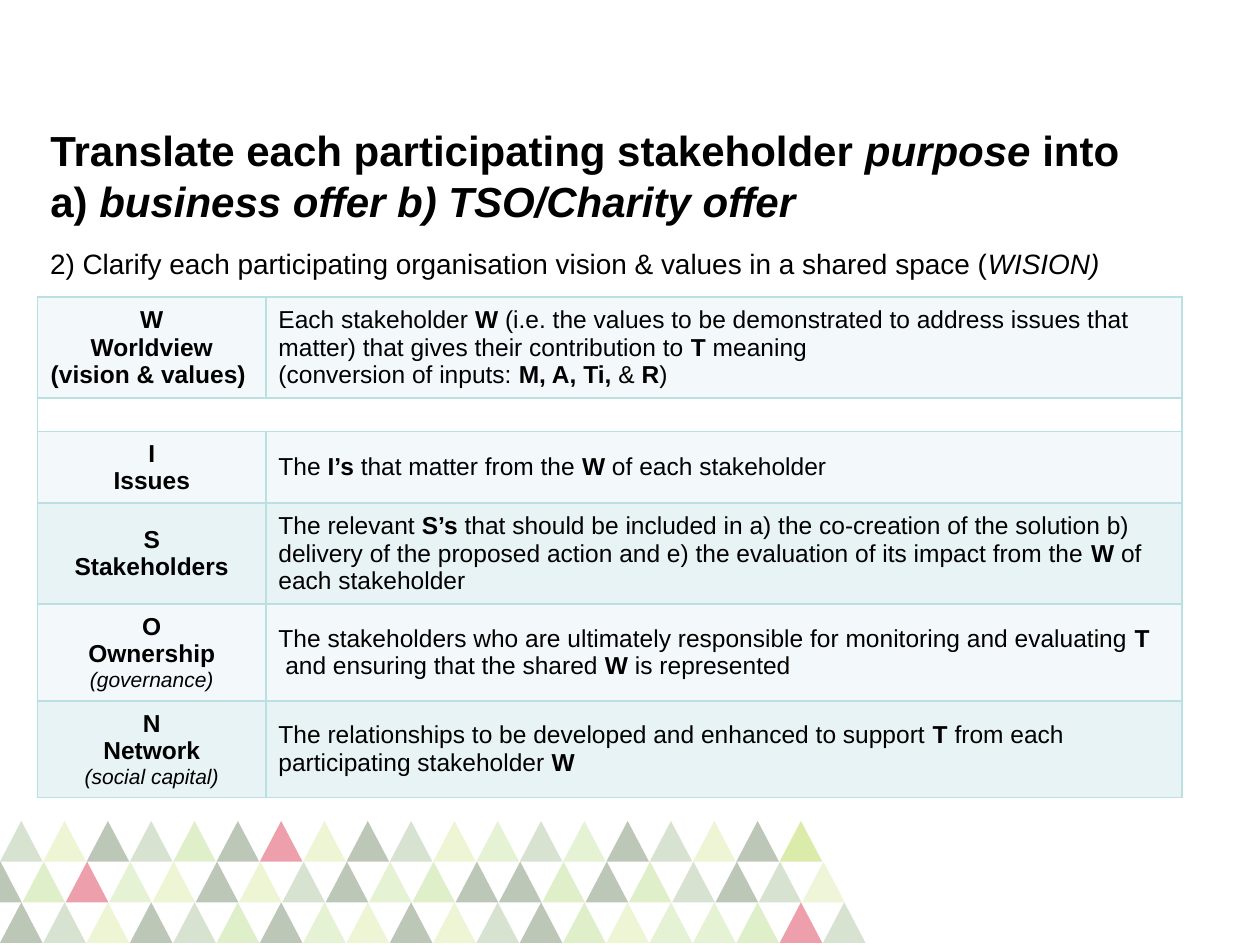
from dataclasses import dataclass
from lxml.etree import SubElement
from pptx import Presentation
from pptx.dml.color import RGBColor
from pptx.enum.shapes import MSO_SHAPE
from pptx.enum.text import MSO_ANCHOR, MSO_AUTO_SIZE, PP_ALIGN
from pptx.oxml.ns import qn
from pptx.slide import Slide
from pptx.util import Cm, Pt

BLACK = RGBColor(0x00, 0x00, 0x00)
BORDER = RGBColor(0xBB, 0xE0, 0xE3)
PALE = RGBColor(0xF3, 0xF9, 0xFA)
TINT = RGBColor(0xE7, 0xF3, 0xF4)
FOREST = RGBColor(0x26, 0x47, 0x15)
GREEN = RGBColor(0x4A, 0x81, 0x2C)
LEAF = RGBColor(0x81, 0xC1, 0x2C)
LIME = RGBColor(0xA7, 0xCD, 0x28)
RED = RGBColor(0xD3, 0x12, 0x2E)

TRIANGLE_FILLS = {
    "D": (FOREST, 30), "G": (GREEN, 22), "L": (LEAF, 25), "l": (LEAF, 20),
    "Y": (LIME, 20), "y": (LIME, 18), "B": (LIME, 40), "R": (RED, 40),
}
TRIANGLE_ROWS = [
    (0, "GYDGLDRYDGYlGlDGYDB"),
    (-0.42, "DLRlYDYGDlLDDLDLGDGy"),
    (0, "DGYDGLDlYDYGDLYllLRG"),
]

TITLE = {"size": Pt(24), "bold": True, "italic": False}
LEAD = {"size": Pt(16), "bold": False, "italic": False}
LABEL = {"size": Pt(14), "bold": True, "italic": False}
DETAIL = {"size": Pt(14), "bold": False, "italic": False}
ITALIC = {"italic": True}
BOLD = {"bold": True}
NOTE = {"size": Pt(12), "bold": False, "italic": True}

WISION_ROWS = [
    (1.92, PALE, ["W", "Worldview", "(vision & values) "],
     ["Each stakeholder *W* (i.e. the values to be demonstrated to address issues "
      "that matter) that gives their contribution to *T* meaning",
      "(conversion of inputs: *M, A, Ti, *& *R*)"]),
    (0.65, None, [], []),
    (1.36, PALE, ["I", "Issues"],
     ["The* I’s* that matter from the *W* of each stakeholder"]),
    (1.92, TINT, ["S", "Stakeholders"],
     ["The relevant *S’s* that should be included in a) the co-creation of the "
      "solution b) delivery of the proposed action and e) the evaluation of its "
      "impact from the *W* of each stakeholder"]),
    (1.84, PALE, ["O", "Ownership", "*(governance)*"],
     ["The stakeholders who are ultimately responsible for monitoring and "
      "evaluating *T*",
      "* *and ensuring that the shared* W *is represented"]),
    (1.84, TINT, ["N", "Network", "*(social capital)*"],
     ["The relationships to be developed and enhanced to support *T* from each "
      "participating stakeholder *W*"]),
]


@dataclass
class SlideBuilder:
    """Hold the text style and the slide, and draw each kind of element."""

    slide: Slide
    font_name: str = "Arial"

    def add_lines(self, frame, lines, base, emphasis, align=PP_ALIGN.LEFT):
        """Add one paragraph a line, with emphasis between asterisks."""
        frame.word_wrap = True
        for index, line in enumerate(lines):
            para = frame.add_paragraph() if index else frame.paragraphs[0]
            para.alignment = align
            for position, piece in enumerate(line.split("*")):
                if piece:
                    self.add_span(para, piece, {**base, **emphasis} if position % 2 else base)

    def add_span(self, para, text, values):
        """Add a run, turning a newline into a line break."""
        for index, part in enumerate(text.split("\n")):
            if index:
                para.add_line_break()
            span = para.add_run()
            span.text = part
            span.font.color.rgb = BLACK
            for name, value in {"name": self.font_name, **values}.items():
                setattr(span.font, name, value)

    def title(self, text, left, top, width, height):
        """Place and fill the title placeholder."""
        box = self.slide.shapes.title
        places = {"left": left, "top": top, "width": width, "height": height}
        for name, value in places.items():
            setattr(box, name, Cm(value))
        box.text_frame.auto_size = MSO_AUTO_SIZE.NONE
        box.text_frame.vertical_anchor = MSO_ANCHOR.MIDDLE
        self.add_lines(box.text_frame, [text], TITLE, ITALIC)

    def text(self, text, left, top, width, height):
        """Add a text box."""
        box = self.slide.shapes.add_textbox(Cm(left), Cm(top), Cm(width), Cm(height))
        self.add_lines(box.text_frame, [text], LEAD, ITALIC)

    def triangle(self, left, top, color, opacity):
        """Add a translucent triangle."""
        shape = self.slide.shapes.add_shape(
            MSO_SHAPE.ISOSCELES_TRIANGLE, Cm(left), Cm(top), Cm(0.86), Cm(0.82))
        shape.shadow.inherit = False
        shape.fill.solid()
        shape.fill.fore_color.rgb = color
        shape.line.fill.background()
        fill = shape.element.spPr.find(".//" + qn("a:srgbClr"))
        SubElement(fill, qn("a:alpha"), val=str(opacity * 1000))

    def style_cell(self, cell, color):
        """Give a cell its border and fill."""
        cell.vertical_anchor = MSO_ANCHOR.MIDDLE
        properties = cell._tc.get_or_add_tcPr()
        for side in ("lnL", "lnR", "lnT", "lnB"):
            line = SubElement(properties, qn(f"a:{side}"), w=str(Pt(1)))
            fill = SubElement(line, qn("a:solidFill"))
            SubElement(fill, qn("a:srgbClr"), val=str(BORDER))
        if color is None:
            cell.fill.background()
        else:
            cell.fill.solid()
            cell.fill.fore_color.rgb = color

    def table(self, rows, left, top, widths):
        """Add a two-column table, merging the rows without text."""
        height = sum(row[0] for row in rows)
        table = self.slide.shapes.add_table(
            len(rows), len(widths), Cm(left), Cm(top), Cm(sum(widths)), Cm(height)).table
        table.first_row = table.horz_banding = False
        for column, width in zip(table.columns, widths):
            column.width = Cm(width)
        for index, (row_height, color, label, detail) in enumerate(rows):
            table.rows[index].height = Cm(row_height)
            first, second = table.cell(index, 0), table.cell(index, 1)
            for cell in (first, second):
                self.style_cell(cell, color)
            if label:
                self.add_lines(first.text_frame, label, LABEL, NOTE, PP_ALIGN.CENTER)
                self.add_lines(second.text_frame, detail, DETAIL, BOLD)
            else:
                first.merge(second)
                for cell in (first, second):
                    para = cell._tc.txBody.find(qn("a:p"))
                    SubElement(para, qn("a:endParaRPr"), sz="1000")


def main():
    """Build the deck."""
    deck = Presentation()
    deck.slide_width, deck.slide_height = Cm(25.4), Cm(19.05)
    page = SlideBuilder(deck.slides.add_slide(deck.slide_layouts[5]))
    pitch = 16.59 / 19
    for row, (start, pattern) in enumerate(TRIANGLE_ROWS):
        for column, key in enumerate(pattern):
            page.triangle(start + column * pitch, 16.55 + row * 0.82, *TRIANGLE_FILLS[key])
    page.title("Translate each participating stakeholder *purpose* into \n"
               "a) *business offer b) TSO/Charity offer*", 0.76, 2.57, 23.47, 1.93)
    page.text("2) Clarify each participating organisation vision & values in a "
              "shared space (*WISION)*", 0.76, 4.85, 23.47, 1.1)
    page.table(WISION_ROWS, 0.76, 5.99, (4.6, 18.47))
    deck.save("out.pptx")


if __name__ == "__main__":
    main()
